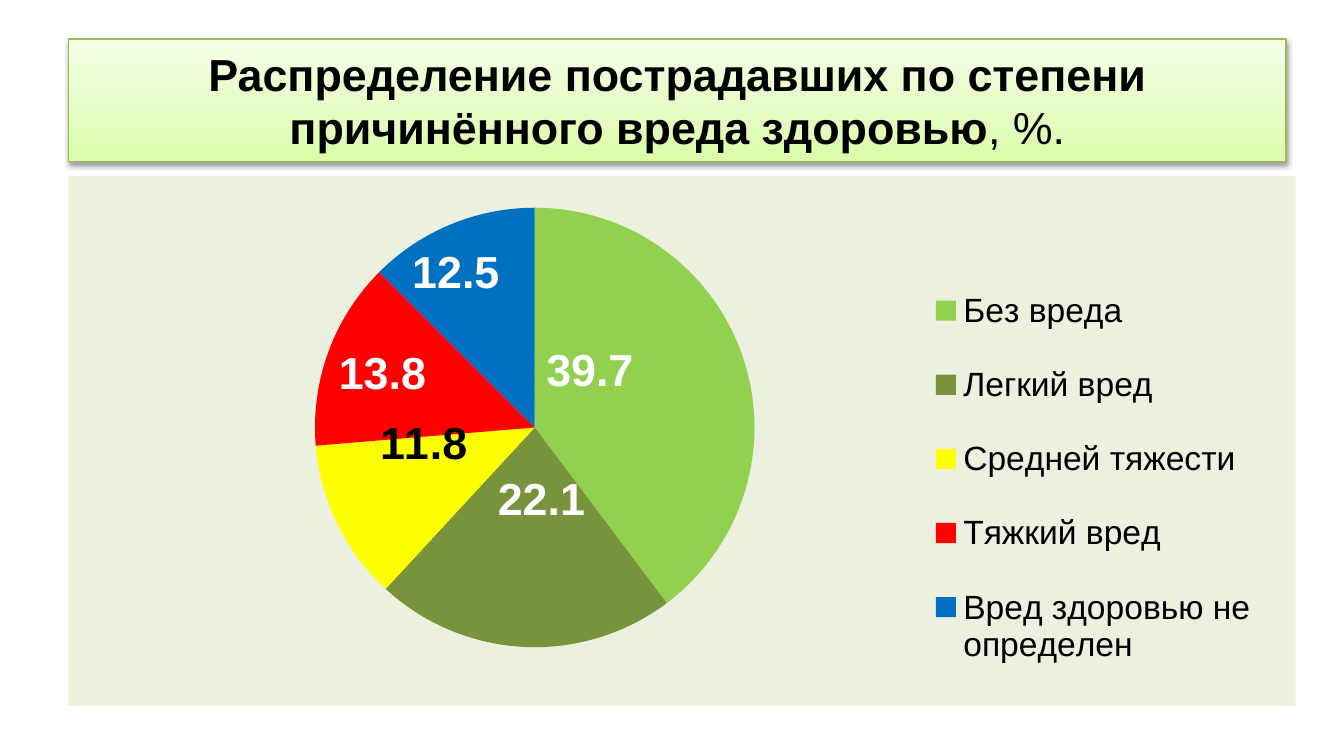
from copy import deepcopy

from lxml import etree
from pptx import Presentation
from pptx.chart.data import CategoryChartData
from pptx.dml.color import RGBColor
from pptx.enum.chart import XL_CHART_TYPE, XL_LABEL_POSITION, XL_LEGEND_POSITION
from pptx.enum.text import MSO_ANCHOR, MSO_AUTO_SIZE, PP_ALIGN
from pptx.oxml import parse_xml
from pptx.oxml.ns import qn
from pptx.util import Inches, Pt

PIE, RIGHT = XL_CHART_TYPE.PIE, XL_LEGEND_POSITION.RIGHT
MIDDLE = XL_LABEL_POSITION.CENTER
BLACK, WHITE = RGBColor(0, 0, 0), RGBColor(255, 255, 255)
GREEN, OLIVE = RGBColor(0x92, 0xD0, 0x50), RGBColor(0x77, 0x93, 0x3C)
YELLOW, RED = RGBColor(255, 255, 0), RGBColor(255, 0, 0)
BLUE, EDGE = RGBColor(0, 0x70, 0xC0), RGBColor(0x98, 0xB9, 0x55)
PANEL = RGBColor(0xEB, 0xF1, 0xDE)
SHADES = [(0, RGBColor(0xDA, 0xFD, 0xA7)), (0.35, RGBColor(0xE4, 0xFC, 0xC2)),
          (1, RGBColor(0xF5, 0xFF, 0xE7))]
FONT = "Arial"
NS = ('xmlns:a="http://schemas.openxmlformats.org/drawingml/2006/main" '
      'xmlns:c="http://schemas.openxmlformats.org/drawingml/2006/chart"')

TITLE = [("Распределение пострадавших по степени причинённого вреда здоровью", True),
         (", %.", False)]
# name, value, fill, label colour, label shift as share of the chart
SLICES = [
    ("Без вреда", 39.7, GREEN, WHITE, (-0.04, -0.04)),
    ("Легкий вред", 22.1, OLIVE, WHITE, (0.01, -0.07)),
    ("Средней тяжести", 11.8, YELLOW, BLACK, (-0.01, -0.06)),
    ("Тяжкий вред", 13.8, RED, WHITE, (-0.04, -0.03)),
    ("Вред здоровью не определен", 12.5, BLUE, WHITE, (-0.03, -0.1)),
]
WIDE = Inches(10)
TALL = WIDE * 9 // 16
TITLE_BOX = [Inches(n) for n in (0.51, 0.29, 9.06, 0.91)]
CHART_BOX = [Inches(n) for n in (0.51, 1.31, 9.13, 3.94)]
PLOT_AREA = {"x": 0.07, "y": 0.06, "w": 0.62, "h": 0.83}
KEY_AREA = {"x": 0.69, "y": 0.15, "w": 0.29, "h": 0.84}


def set_layout(part, index, area, inner=False):
    """Give a chart part a manual layout as its child number index."""
    for old in part.findall(qn("c:layout")):
        part.remove(old)
    layout = parse_xml(f"<c:layout {NS}><c:manualLayout/></c:layout>")
    marks = [("layoutTarget", "inner")] if inner else []
    if "w" in area:
        marks += [("xMode", "edge"), ("yMode", "edge")]
    for tag, val in marks + list(area.items()):
        etree.SubElement(layout[0], qn(f"c:{tag}")).set("val", str(val))
    part.insert(index, layout)


def style(font, size, color, bold=False):
    font.name, font.size, font.bold = FONT, Pt(size), bold
    font.color.rgb = color


def add_title(slide):
    title = slide.shapes.title
    title.left, title.top, title.width, title.height = TITLE_BOX
    title.fill.gradient()
    title.fill.gradient_angle = 90
    stops = title._element.spPr.find(qn("a:gradFill")).find(qn("a:gsLst"))
    stops.append(deepcopy(stops[-1]))
    for stop, (pos, color) in zip(title.fill.gradient_stops, SHADES):
        stop.position, stop.color.rgb = pos, color
    title.line.color.rgb, title.line.width = EDGE, Pt(0.75)
    title._element.spPr.append(parse_xml(
        f'<a:effectLst {NS}><a:outerShdw blurRad="40000" dist="20000" dir="5400000" '
        'rotWithShape="0"><a:srgbClr val="000000"><a:alpha val="38000"/></a:srgbClr>'
        '</a:outerShdw></a:effectLst>'))

    frame = title.text_frame
    frame.word_wrap, frame.auto_size = True, MSO_AUTO_SIZE.NONE
    frame.vertical_anchor = MSO_ANCHOR.MIDDLE
    para = frame.paragraphs[0]
    para.alignment = PP_ALIGN.CENTER
    for text, bold in TITLE:
        run = para.add_run()
        run.text = text
        style(run.font, 24, BLACK, bold)


def add_pie(slide):
    data = CategoryChartData()
    data.categories = [row[0] for row in SLICES]
    data.add_series("Series 1", [row[1] for row in SLICES])
    chart = slide.shapes.add_chart(PIE, *CHART_BOX, data).chart
    chart.has_title = False
    chart.font.name, chart.font.size = "Calibri", Pt(10)
    chart.font.color.rgb = BLACK
    space = chart._chartSpace
    space.find(qn("c:chart")).addnext(parse_xml(
        f'<c:spPr {NS}><a:solidFill><a:srgbClr val="{PANEL}"/></a:solidFill>'
        '<a:ln><a:noFill/></a:ln></c:spPr>'))

    plot = chart.plots[0]
    plot.vary_by_categories = True
    series = plot.series[0]
    labels = series.data_labels
    labels.show_value, labels.position = True, MIDDLE
    style(labels.font, 24, WHITE, True)
    for i, (_, _, fill, color, _) in enumerate(SLICES):
        point = series.points[i]
        point.format.fill.solid()
        point.format.fill.fore_color.rgb = fill
        style(point.data_label.font, 24, color, True)
        point.data_label.position = MIDDLE
    for label, row in zip(space.iter(qn("c:dLbl")), SLICES):
        set_layout(label, 1, dict(zip("xy", row[4])))

    chart.has_legend = True
    key = chart.legend
    key.position, key.include_in_layout = RIGHT, False
    style(key.font, 18, BLACK)
    set_layout(next(space.iter(qn("c:legend"))), 1, KEY_AREA)
    set_layout(next(space.iter(qn("c:plotArea"))), 0, PLOT_AREA, inner=True)


def main():
    deck = Presentation()
    deck.slide_width, deck.slide_height = WIDE, TALL
    slide = deck.slides.add_slide(deck.slide_layouts[5])
    add_pie(slide)
    add_title(slide)
    deck.save("out.pptx")


if __name__ == "__main__":
    main()
